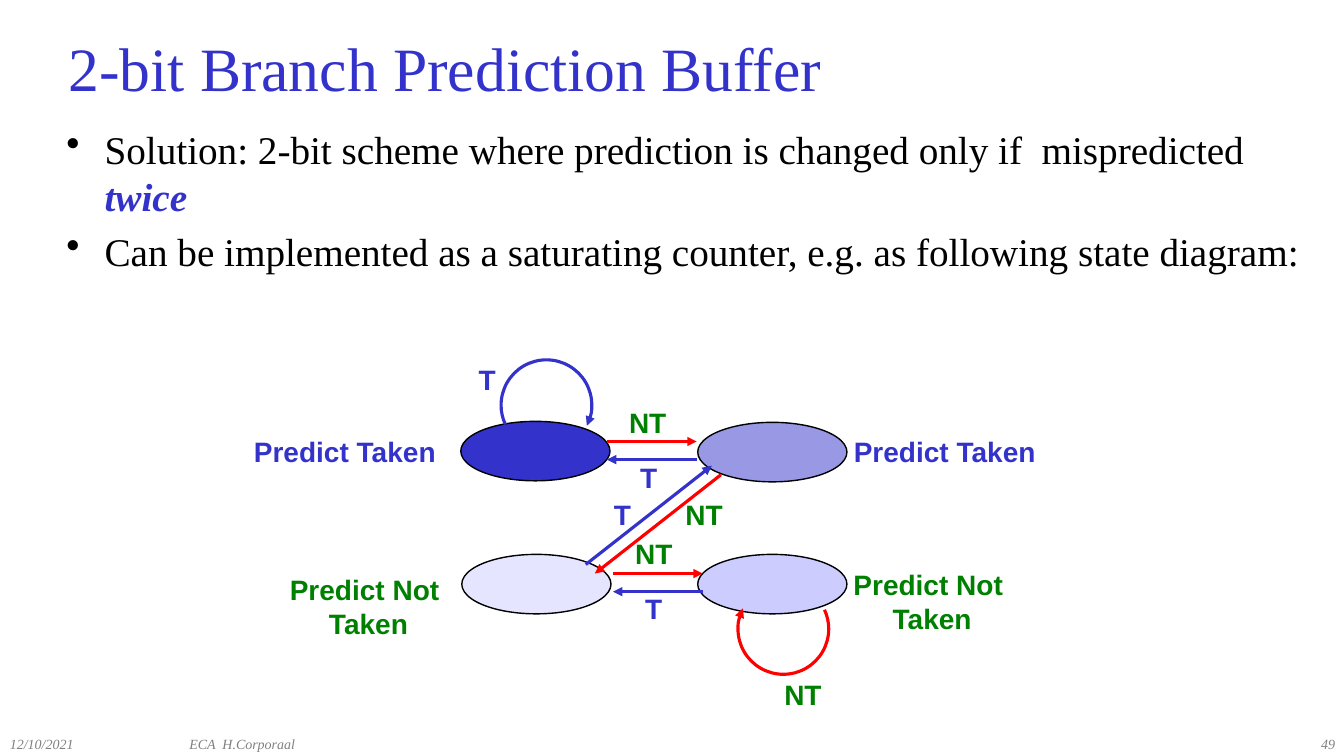
from typing import NamedTuple

from lxml.etree import SubElement
from pptx import Presentation
from pptx.dml.color import RGBColor
from pptx.enum.shapes import MSO_CONNECTOR, MSO_SHAPE
from pptx.enum.text import MSO_ANCHOR, PP_ALIGN
from pptx.oxml.ns import qn
from pptx.util import Inches, Pt

BLUE, GREEN, RED = "3333CC", "008000", "FF0000"
BLACK, GRAY, LAVENDER = "000000", "808080", "CCCCFF"
SERIF, SANS = "Times New Roman", "Arial"
LEFT, CENTER, RIGHT = PP_ALIGN.LEFT, PP_ALIGN.CENTER, PP_ALIGN.RIGHT
STATE_W, STATE_H = 1.48, 0.59
LOOP_SIZE = 0.9


class State(NamedTuple):
    x: float
    y: float
    color: str
    opacity: int = 100


class Loop(NamedTuple):
    x: float
    y: float
    start: int
    end: int
    color: str


class Arrow(NamedTuple):
    x1: float
    y1: float
    x2: float
    y2: float
    color: str


class Label(NamedTuple):
    text: str
    x: float
    y: float
    w: float
    h: float
    color: str


class Footer(NamedTuple):
    text: str
    x: float
    w: float
    align: PP_ALIGN


STATES = [
    State(4.57, 4.18, BLUE),
    State(6.92, 4.19, BLUE, 50),
    State(4.58, 5.5, LAVENDER, 50),
    State(6.92, 5.5, LAVENDER),
]
# Angles run clockwise in degrees from three o'clock.
LOOPS = [Loop(4.97, 3.57, 155, 27, BLUE), Loop(7.32, 5.79, 335, 207, RED)]
ARROWS = [
    Arrow(6.02, 4.38, 6.91, 4.38, RED),
    Arrow(6.91, 4.56, 6.02, 4.56, BLUE),
    Arrow(6.08, 5.69, 6.97, 5.69, RED),
    Arrow(6.97, 5.87, 6.08, 5.87, BLUE),
    Arrow(5.81, 5.6, 7.06, 4.62, BLUE),
    Arrow(7.15, 4.71, 5.9, 5.69, RED),
]
TAKEN = [(4.65, 3.55), (6.25, 4.52), (5.99, 4.89), (6.3, 5.82)]
NOT_TAKEN = [(6.14, 3.97), (6.7, 4.89), (6.2, 5.27), (7.68, 6.67)]
LABELS = [
    *(Label("T", x, y, 0.4, 0.46, BLUE) for x, y in TAKEN),
    *(Label("NT", x, y, 0.61, 0.46, GREEN) for x, y in NOT_TAKEN),
    *(Label("Predict Taken", x, 4.26, 2.16, 0.46, BLUE) for x in (2.42, 8.37)),
    *(Label("Predict Not \nTaken", x, y, 1.89, 0.82, GREEN)
      for x, y in ((2.71, 5.63), (8.3, 5.58))),
]
FOOTERS = [
    Footer("12/10/2021", 0, 1.78, LEFT),
    Footer("ECA  H.Corporaal", 1.78, 4.22, LEFT),
    Footer("49", 10.56, 2.78, RIGHT),
]
BULLETS = [
    [("Solution: 2-bit scheme where prediction is changed only if  mispredicted ", False),
     ("twice", True)],
    [("Can be implemented as a saturating counter, e.g. as following state diagram:", False)],
]


def rgb(color: str) -> RGBColor:
    return RGBColor.from_string(color)


def style_run(r, size: float, color: str, font: str = SERIF,
              bold: bool = False, italic: bool = False) -> None:
    r.font.name, r.font.size = font, Pt(size)
    r.font.bold, r.font.italic = bold, italic
    r.font.color.rgb = rgb(color)


def add_box(s, x: float, y: float, w: float, h: float, wrap: bool = True):
    """Add an empty text box and return its text frame."""
    tf = s.shapes.add_textbox(Inches(x), Inches(y), Inches(w), Inches(h)).text_frame
    tf.word_wrap = wrap
    return tf


def add_title(s, text: str) -> None:
    tf = add_box(s, 0.58, 0.25, 12.44, 0.83)
    tf.vertical_anchor = MSO_ANCHOR.MIDDLE
    tf.text = text
    style_run(tf.paragraphs[0].runs[0], 44, BLUE)


def add_bullets(s) -> None:
    tf = add_box(s, 0.56, 1.19, 12.44, 5.91)
    for i, parts in enumerate(BULLETS):
        p = tf.add_paragraph() if i else tf.paragraphs[0]
        p.space_before = Pt(5.6)
        pPr = p._p.get_or_add_pPr()
        pPr.set("marL", str(Inches(0.38)))
        pPr.set("indent", str(Inches(-0.38)))
        SubElement(pPr, qn("a:buChar"), char="•")
        for text, strong in parts:
            r = p.add_run()
            r.text = text
            style_run(r, 28, BLUE if strong else BLACK, bold=strong, italic=strong)


def add_footer(s, footer: Footer) -> None:
    tf = add_box(s, footer.x, 7.25, footer.w, 0.25)
    tf.vertical_anchor = MSO_ANCHOR.MIDDLE
    tf.text = footer.text
    p = tf.paragraphs[0]
    p.alignment = footer.align
    style_run(p.runs[0], 10, GRAY, italic=True)


def add_label(s, label: Label) -> None:
    tf = add_box(s, label.x, label.y, label.w, label.h, wrap=False)
    tf.text = label.text
    for p in tf.paragraphs:
        p.alignment = CENTER if len(tf.paragraphs) > 1 else LEFT
        style_run(p.runs[0], 20, label.color, SANS, bold=True)


def add_state(s, state: State) -> None:
    sp = s.shapes.add_shape(MSO_SHAPE.OVAL, Inches(state.x), Inches(state.y),
                            Inches(STATE_W), Inches(STATE_H))
    sp.shadow.inherit = False
    sp.fill.solid()
    sp.fill.fore_color.rgb = rgb(state.color)
    if state.opacity < 100:
        color = sp._element.spPr.find(qn("a:solidFill"))[0]
        SubElement(color, qn("a:alpha"), val=str(state.opacity * 1000))
    sp.line.color.rgb = rgb(BLACK)
    sp.line.width = Pt(1)


def style_arrow(sp, color: str) -> None:
    sp.line.color.rgb = rgb(color)
    sp.line.width = Pt(2.25)
    SubElement(sp.line._get_or_add_ln(), qn("a:tailEnd"), type="triangle")


def add_loop(s, loop: Loop) -> None:
    sp = s.shapes.add_shape(MSO_SHAPE.ARC, Inches(loop.x), Inches(loop.y),
                            Inches(LOOP_SIZE), Inches(LOOP_SIZE))
    sp.shadow.inherit = False
    sp.fill.background()
    for i, angle in enumerate((loop.start, loop.end)):
        sp.adjustments[i] = angle * 0.6
    style_arrow(sp, loop.color)


def add_arrow(s, arrow: Arrow) -> None:
    sp = s.shapes.add_connector(MSO_CONNECTOR.STRAIGHT, Inches(arrow.x1), Inches(arrow.y1),
                                Inches(arrow.x2), Inches(arrow.y2))
    style_arrow(sp, arrow.color)
    SubElement(sp._element.spPr, qn("a:effectLst"))


def main() -> None:
    prs = Presentation()
    prs.slide_width, prs.slide_height = Inches(13.33), Inches(7.5)
    s = prs.slides.add_slide(prs.slide_layouts[6])
    add_title(s, "2-bit Branch Prediction Buffer")
    add_bullets(s)
    for add, items in ((add_footer, FOOTERS), (add_state, STATES), (add_loop, LOOPS),
                       (add_arrow, ARROWS), (add_label, LABELS)):
        for item in items:
            add(s, item)
    prs.save("out.pptx")


if __name__ == "__main__":
    main()
